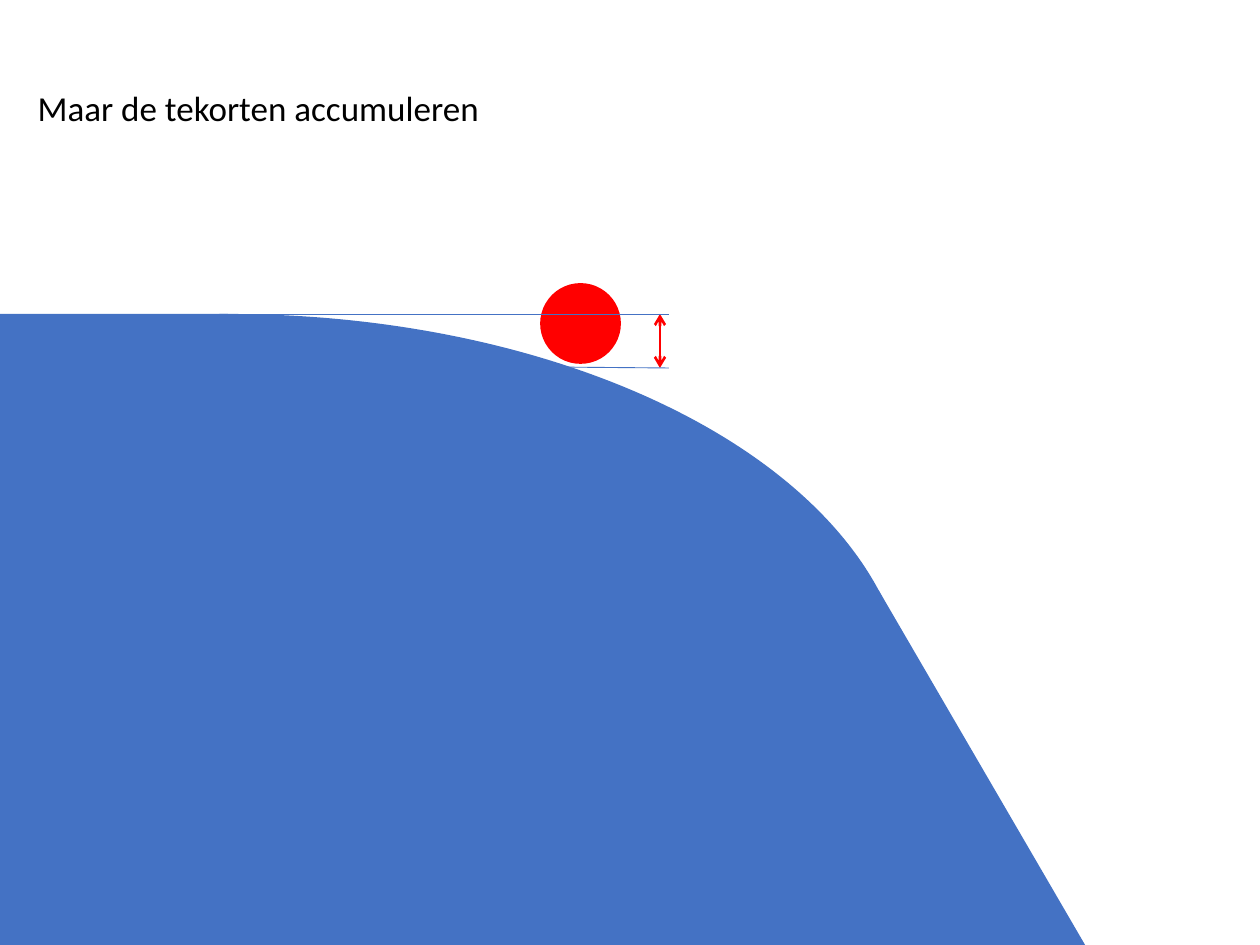
import dataclasses
import lxml.etree
import pptx
import pptx.dml.color
import pptx.enum.shapes
import pptx.enum.text
import pptx.oxml.ns
import pptx.util

SHAPE = pptx.enum.shapes.MSO_SHAPE


@dataclasses.dataclass(frozen=True)
class Theme:
    """Colours, font and sizes of the slide."""
    hill: str = "4472C4"
    ball: str = "FF0000"
    ink: str = "000000"
    font: str = "Calibri"
    title: int = 20
    thin: float = 0.5
    edge: float = 1
    bold: float = 1.5


THEME = Theme()


def px(count):
    """Turn whole pixels into EMU."""
    return pptx.util.Emu(round(count * 914400 / 126))


def rgb(code):
    """Turn a hex code into a colour."""
    return pptx.dml.color.RGBColor.from_string(code)


def add_title(slide, text, box):
    """Place and format the title."""
    title = slide.shapes.title
    title.left, title.top, title.width, title.height = map(px, box)
    frame = title.text_frame
    frame.word_wrap = True
    frame.auto_size = pptx.enum.text.MSO_AUTO_SIZE.NONE
    frame.vertical_anchor = pptx.enum.text.MSO_ANCHOR.MIDDLE
    para = frame.paragraphs[0]
    para.alignment = pptx.enum.text.PP_ALIGN.LEFT
    para.line_spacing = 0.9
    run = para.add_run()
    run.text = text
    run.font.name = THEME.font
    run.font.size = pptx.util.Pt(THEME.title)
    run.font.color.rgb = rgb(THEME.ink)


def add_form(slide, kind, box, fill, turn=0, edge=0):
    """Draw a filled shape, edged in its own colour if asked."""
    form = slide.shapes.add_shape(kind, *map(px, box))
    form.shadow.inherit = False
    form.rotation = turn
    form.fill.solid()
    form.fill.fore_color.rgb = rgb(fill)
    if edge:
        form.line.color.rgb = rgb(fill)
        form.line.width = pptx.util.Pt(edge)
    else:
        form.line.fill.background()


def add_line(slide, ends, color, width, heads=False):
    """Draw a straight line, with arrowheads at both ends if asked."""
    kind = pptx.enum.shapes.MSO_CONNECTOR.STRAIGHT
    line = slide.shapes.add_connector(kind, *map(px, ends))
    line.line.color.rgb = rgb(color)
    line.line.width = pptx.util.Pt(width)
    name = pptx.oxml.ns.qn
    if heads:
        stroke = line.line._get_or_add_ln()
        for end in ("a:headEnd", "a:tailEnd"):
            lxml.etree.SubElement(stroke, name(end), type="arrow")
    lxml.etree.SubElement(line._element.spPr, name("a:effectLst"))


def main():
    """Build and save the slide."""
    deck = pptx.Presentation()
    deck.slide_width, deck.slide_height = px(1260), px(945)
    slide = deck.slides.add_slide(deck.slide_layouts[5])
    top, base = 314, 368
    left, right = 64, 669

    add_form(slide, SHAPE.OVAL, (-451, top, 1360, 784), THEME.hill)
    add_form(slide, SHAPE.RECTANGLE, (-74, top, 302, 49), THEME.hill)
    add_form(slide, SHAPE.RECTANGLE, (615, 728, 503, 321), THEME.hill, turn=59.8)
    add_form(slide, SHAPE.OVAL, (541, 284, 79, 79), THEME.ball, edge=THEME.edge)
    add_title(slide, "Maar de tekorten accumuleren", (25, 6, 1162, 208))
    add_line(slide, (660, top, 660, base), THEME.ball, THEME.bold, heads=True)
    for start, end in ((top, top), (base, 363)):
        add_line(slide, (right, start, left, end), THEME.hill, THEME.thin)
    deck.save("out.pptx")


if __name__ == "__main__":
    main()
